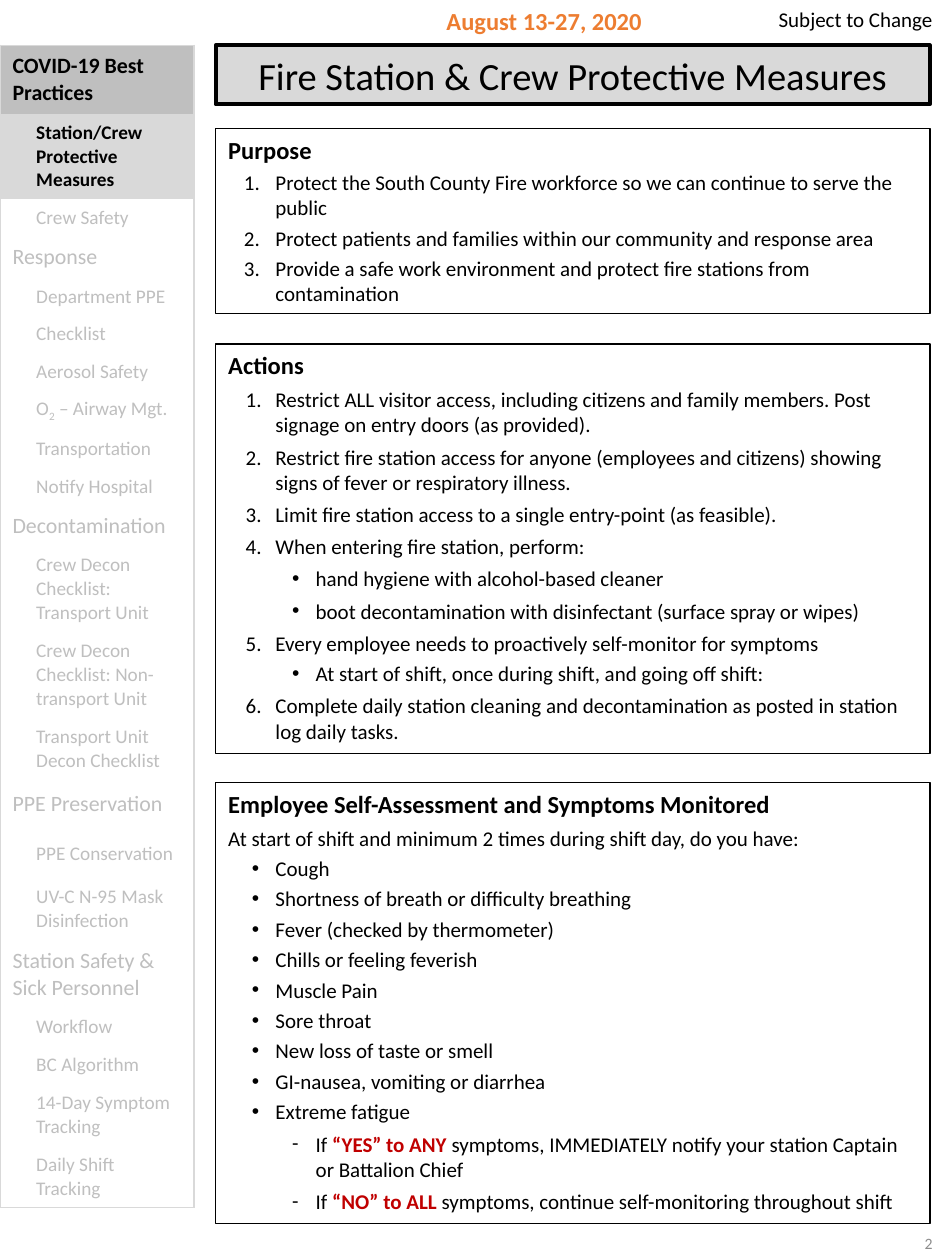
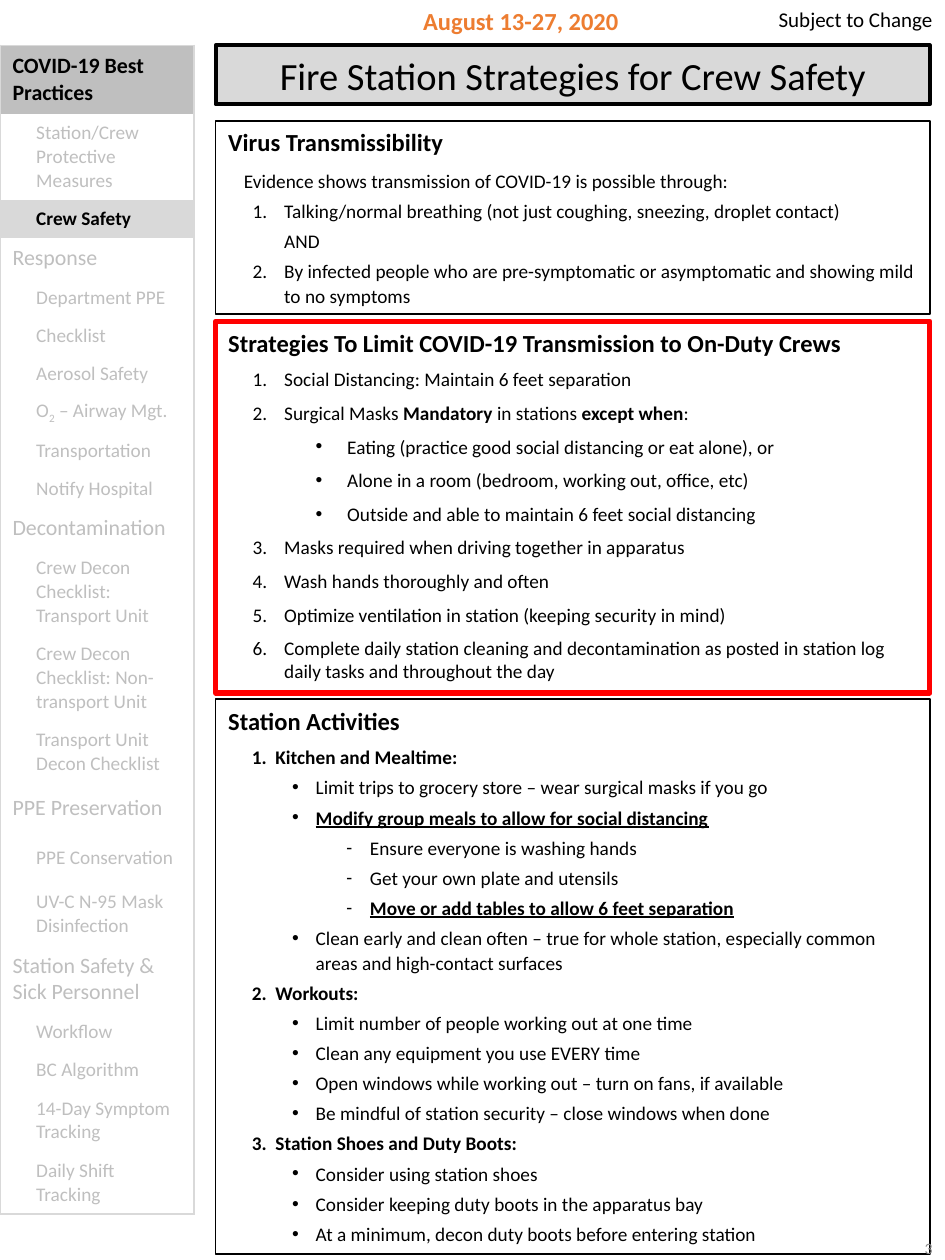
"""Build two pages of a fire station COVID-19 best practices guide."""
from lxml.etree import SubElement
from pptx import Presentation
from pptx.dml.color import RGBColor
from pptx.enum.text import MSO_ANCHOR as Anchor, MSO_AUTO_SIZE as AutoSize, PP_ALIGN as Align
from pptx.oxml.ns import qn
from pptx.util import Pt

FONT = "Calibri"
COLORS = {
    "ink": "000000", "muted": "BFBFBF", "band": "D9D9D9", "date": "ED7D31",
    "page": "8C8C8C", "answer": "C00000", "alert": "FF0000",
}
RGB = {name: RGBColor.from_string(value) for name, value in COLORS.items()}
PANEL_LEFT, PANEL_WIDTH = 123.2, 408.2
NO_GRID_STYLE = "{2D5ABB26-0587-4C30-8999-92F81FD0307C}"

# style: level, left margin, indent, bullet or start number, space before, size, line spacing
STYLES = {
    "heading": (0, 0, 0, None, 0, 14, None),
    "purpose": (0, 27, -18, 1, 3, 12, None),
    "action": (0, 27, -17, 1, 4, 12, None),
    "action detail": (1, 50, -13.5, "•", 4, 12, None),
    "action timing": (1, 50, -13.5, "•", 3, 12, None),
    "question": (0, 0, 0, None, 4, 12, None),
    "first symptom": (0, 27, -13.5, "•", 3, 12, 14.2),
    "symptom": (0, 27, -13.5, "•", 3, 12, None),
    "answer": (3, 50, -13.5, "-", 4, 12, None),
    "evidence": (0, 9, 0, None, 6, 11, 14.2),
    "route": (1, 32, -18, 1, 3, 11, 14.2),
    "and": (1, 32, 0, None, 3, 11, 14.2),
    "second route": (1, 32, -18, 2, 3, 11, 14.2),
    "strategy": (0, 32, -18, 1, 6, 11, None),
    "exception": (1, 68, -18, "•", 6, 11, None),
    "first activity": (0, 27, -13.5, 1, 6, 11, None),
    "activity": (0, 27, -13.5, 1, 3, 11, 14.2),
    "rule": (1, 50, -13.5, "•", 3, 11, 14.2),
    "rule detail": (2, 81, -13.5, "-", 3, 11, 14.2),
}

# menu entry: text, is a section, row height
MENU = [
    ("COVID-19 Best Practices", True, 39),
    ("Station/Crew Protective Measures", False, 49),
    ("Crew Safety", False, 21.6),
    ("Response", True, 23.2),
    ("Department PPE", False, 21.6),
    ("Checklist", False, 21.6),
    ("Aerosol Safety", False, 21.6),
    ("O|2| – Airway Mgt.", False, 21.6),
    ("Transportation", False, 21.6),
    ("Notify Hospital", False, 21.6),
    ("Decontamination", True, 23.2),
    ("Crew Decon Checklist: Transport Unit", False, 49),
    ("Crew Decon Checklist: Non-transport Unit", False, 49),
    ("Transport Unit Decon Checklist", False, 35.4),
    ("PPE Preservation", True, 28.2),
    ("PPE Conservation", False, 28.2),
    ("UV-C N-95 Mask Disinfection", False, 35.4),
    ("Station Safety & Sick Personnel", True, 39),
    ("Workflow", False, 21.6),
    ("BC Algorithm", False, 21.6),
    ("14-Day Symptom Tracking", False, 35.4),
    ("Daily Shift Tracking", False, 35.4),
]
MENU_HEIGHT = sum(height for _, _, height in MENU)

# Emphasis between bars is bold; a leading ! adds red and a leading _ adds an underline.
PAGES = [
    {
        "title": "Fire Station & Crew Protective Measures",
        "current": 1, "menu height": 663.8, "page top": 691.2,
        "date": (222.5, 177, Align.CENTER),
        "panels": [
            (73.4, 105.8, "ink", 1, [
                ("heading", "|Purpose|"),
                ("purpose", "Protect the South County Fire workforce so we can continue to serve the public"),
                ("purpose", "Protect patients and families within our community and response area"),
                ("purpose", "Provide a safe work environment and protect fire stations from contamination"),
            ]),
            (196.6, 234, "ink", 1, [
                ("heading", "|Actions|"),
                ("action", "Restrict ALL visitor access, including citizens and family members. "
                           "Post signage on entry doors (as provided)."),
                ("action", "Restrict fire station access for anyone (employees and citizens) "
                           "showing signs of fever or respiratory illness."),
                ("action", "Limit fire station access to a single entry-point (as feasible)."),
                ("action", "When entering fire station, perform:"),
                ("action detail", "hand hygiene with alcohol-based cleaner"),
                ("action detail", "boot decontamination with disinfectant (surface spray or wipes)"),
                ("action", "Every employee needs to proactively self-monitor for symptoms"),
                ("action timing", "At start of shift, once during shift, and going off shift:"),
                ("action", "Complete daily station cleaning and decontamination as posted in "
                           "station log daily tasks."),
            ]),
            (447.1, 252, "ink", 1, [
                ("heading", "|Employee Self-Assessment and Symptoms Monitored|"),
                ("question", "At start of shift and minimum 2 times during shift day, do you have:"),
                ("first symptom", "Cough"),
                ("symptom", "Shortness of breath or difficulty breathing"),
                ("symptom", "Fever (checked by thermometer)"),
                ("symptom", "Chills or feeling feverish"),
                ("symptom", "Muscle Pain"),
                ("symptom", "Sore throat"),
                ("symptom", "New loss of taste or smell"),
                ("symptom", "GI-nausea, vomiting or diarrhea"),
                ("symptom", "Extreme fatigue"),
                ("answer", "If |!“YES” to ANY |symptoms, IMMEDIATELY notify your station Captain "
                           "or Battalion Chief"),
                ("answer", "If |!“NO” to ALL |symptoms, continue self-monitoring throughout shift"),
            ]),
        ],
    },
    {
        "title": "Fire Station Strategies for Crew Safety",
        "current": 2, "menu height": 667.4, "page top": 694.1,
        "date": (234.7, 164.9, Align.LEFT),
        "panels": [
            (69.1, 110.2, "ink", 1, [
                ("heading", "|Virus Transmissibility|"),
                ("evidence", "Evidence shows transmission of COVID-19 is possible through:"),
                ("route", "Talking/normal breathing (not just coughing, sneezing, droplet contact)"),
                ("and", "AND"),
                ("second route", "By infected people who are pre-symptomatic or asymptomatic and "
                                 "showing mild to no symptoms"),
            ]),
            (183.6, 212.4, "alert", 3, [
                ("heading", "|Strategies To Limit COVID-19 Transmission to On-Duty Crews|"),
                ("strategy", "Social Distancing: Maintain 6 feet separation"),
                ("strategy", "Surgical Masks |Mandatory| in stations |except when|:"),
                ("exception", "Eating (practice good social distancing or eat alone), or"),
                ("exception", "Alone in a room (bedroom, working out, office, etc)"),
                ("exception", "Outside and able to maintain 6 feet social distancing"),
                ("strategy", "Masks required when driving together in apparatus"),
                ("strategy", "Wash hands thoroughly and often"),
                ("strategy", "Optimize ventilation in station (keeping security in mind)"),
                ("strategy", "Complete daily station cleaning and decontamination as posted in "
                             "station log daily tasks and throughout the day"),
            ]),
            (399.6, 316.8, "ink", 1, [
                ("heading", "|Station Activities|"),
                ("first activity", "|Kitchen and Mealtime:|"),
                ("rule", "Limit trips to grocery store – wear surgical masks if you go"),
                ("rule", "|_Modify group meals to allow for social distancing|"),
                ("rule detail", "Ensure everyone is washing hands"),
                ("rule detail", "Get your own plate and utensils"),
                ("rule detail", "|_Move or add tables to allow 6 feet separation|"),
                ("rule", "Clean early and clean often – true for whole station, especially common "
                         "areas and high-contact surfaces"),
                ("activity", "|Workouts:|"),
                ("rule", "Limit number of people working out at one time"),
                ("rule", "Clean any equipment you use EVERY time"),
                ("rule", "Open windows while working out – turn on fans, if available"),
                ("rule", "Be mindful of station security – close windows when done"),
                ("activity", "|Station Shoes and Duty Boots:|"),
                ("rule", "Consider using station shoes"),
                ("rule", "Consider keeping duty boots in the apparatus bay"),
                ("rule", "At a minimum, decon duty boots before entering station"),
            ]),
        ],
    },
]


def style_font(font, size, color, bold=False):
    font.name, font.size, font.bold = FONT, Pt(size), bold
    font.color.rgb = RGB[color]


def place(shape, left, top, width, height):
    shape.left, shape.top, shape.width, shape.height = Pt(left), Pt(top), Pt(width), Pt(height)
    shape.text_frame.word_wrap = True
    shape.text_frame.auto_size = AutoSize.NONE
    return shape.text_frame


prs = Presentation()
prs.slide_width, prs.slide_height = Pt(540), Pt(720)
prs.element.set("firstSlideNum", "2")

for page in PAGES:
    slide = prs.slides.add_slide(prs.slide_layouts[4])
    title, *bodies, spare = slide.placeholders
    spare.element.getparent().remove(spare.element)

    title_frame = place(title, PANEL_LEFT, 25.9, PANEL_WIDTH, 33.8)
    title_frame.text = page["title"]
    title_frame.vertical_anchor = Anchor.MIDDLE
    title_frame.paragraphs[0].alignment = Align.CENTER
    style_font(title_frame.paragraphs[0].runs[0].font, 22, "ink")
    title.fill.solid()
    title.fill.fore_color.rgb = RGB["band"]
    title.line.color.rgb = RGB["ink"]
    title.line.width = Pt(2.25)

    for panel, (top, height, outline, weight, lines) in zip(bodies, page["panels"]):
        frame = place(panel, PANEL_LEFT, top, PANEL_WIDTH, height)
        frame.vertical_anchor = Anchor.TOP
        panel.line.color.rgb = RGB[outline]
        panel.line.width = Pt(weight)
        for number, (style, text) in enumerate(lines):
            level, margin, indent, bullet, before, size, spacing = STYLES[style]
            paragraph = frame.add_paragraph() if number else frame.paragraphs[0]
            paragraph.level = level
            paragraph.alignment = Align.LEFT
            paragraph.space_before = Pt(before)
            paragraph.line_spacing = Pt(spacing) if spacing else 1.0
            props = paragraph._p.get_or_add_pPr()
            props.set("marL", str(Pt(margin)))
            props.set("indent", str(Pt(indent)))
            if bullet is None:
                SubElement(props, qn("a:buNone"))
            elif isinstance(bullet, int):
                numbering = SubElement(props, qn("a:buAutoNum"), type="arabicPeriod")
                if bullet > 1:
                    numbering.set("startAt", str(bullet))
            else:
                SubElement(props, qn("a:buFont"), typeface="Arial" if bullet == "•" else FONT)
                SubElement(props, qn("a:buChar"), char=bullet)
            for part, words in enumerate(text.split("|")):
                if words:
                    run = paragraph.add_run()
                    run.text = words.lstrip("!_")
                    style_font(run.font, size, "answer" if words[0] == "!" else "ink", part % 2 == 1)
                    run.font.underline = words[0] == "_"

    menu_frame = slide.shapes.add_table(
        len(MENU), 1, Pt(0), Pt(25.9), Pt(110.9), Pt(page["menu height"]))
    menu = menu_frame.table
    menu.first_row = menu.horz_banding = False
    menu._tbl.tblPr.find(qn("a:tableStyleId")).text = NO_GRID_STYLE
    for row, (text, is_section, height) in enumerate(MENU):
        menu.rows[row].height = Pt(height * page["menu height"] / MENU_HEIGHT)
        cell = menu.cell(row, 0)
        cell.vertical_anchor = Anchor.MIDDLE
        edges = ["a:lnL", "a:lnR"]
        edges += ["a:lnT"] if row == 0 else ["a:lnB"] if row == len(MENU) - 1 else []
        cell_props = cell._tc.get_or_add_tcPr()
        for edge in edges:
            border = SubElement(cell_props, qn(edge), w=str(Pt(1)))
            SubElement(SubElement(border, qn("a:solidFill")), qn("a:srgbClr"), val=COLORS["band"])
        active = row in (0, page["current"])
        if active:
            cell.fill.solid()
            cell.fill.fore_color.rgb = RGB["band" if row else "muted"]
        else:
            cell.fill.background()
        entry = cell.text_frame.paragraphs[0]
        if not is_section:
            entry._p.get_or_add_pPr().set("marL", str(Pt(13.5)))
        for part, words in enumerate(text.split("|")):
            run = entry.add_run()
            run.text = words
            style_font(run.font, 12.5 if is_section else 11, "ink" if active else "muted", active)
            if part % 2:
                run.font._element.set("baseline", "-25000")

    date_left, date_width, date_align = page["date"]
    for text, left, top, width, height, size, color, align in [
        ("August 13-27, 2020", date_left, 0, date_width, 24.2, 14, "date", date_align),
        ("Subject to Change", 418.3, 0, 121.7, 21.8, 12, "ink", Align.RIGHT),
        ("", 418.3, page["page top"], 121.7, 38.2, 9, "page", Align.RIGHT),
    ]:
        note = slide.shapes.add_textbox(0, 0, 0, 0)
        frame = place(note, left, top, width, height)
        paragraph = frame.paragraphs[0]
        paragraph.alignment = align
        run = paragraph.add_run()
        run.text = text
        style_font(run.font, size, color, color == "date")
        if color == "page":
            frame.vertical_anchor = Anchor.MIDDLE
            field = SubElement(paragraph._p, qn("a:fld"), type="slidenum",
                               id="{B6F15528-21DE-4FAA-801E-634DDDAF4B2B}")
            field.append(run.font._element)
            SubElement(field, qn("a:t")).text = str(PAGES.index(page) + 2)
            paragraph._p.remove(run._r)

prs.save("out.pptx")
